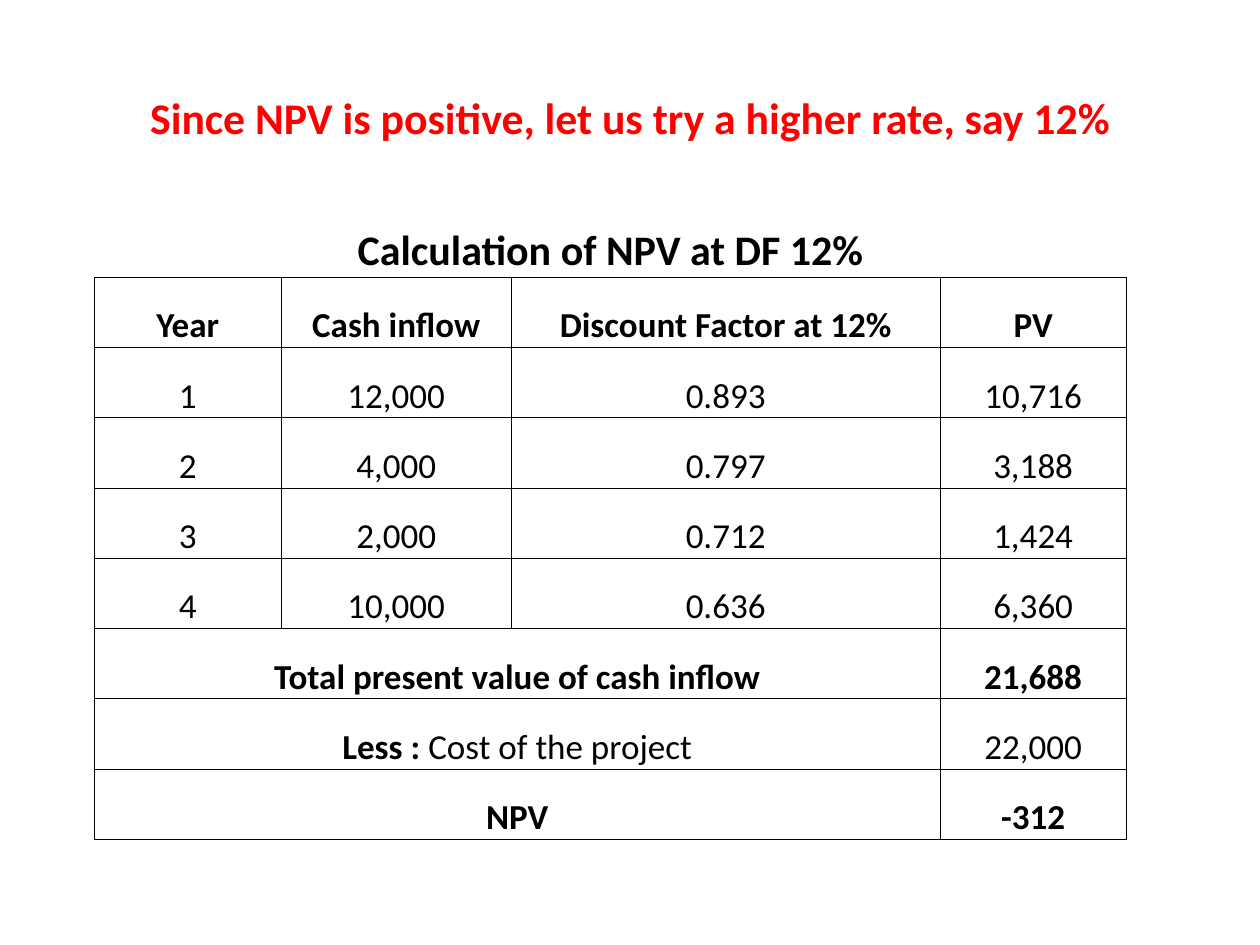
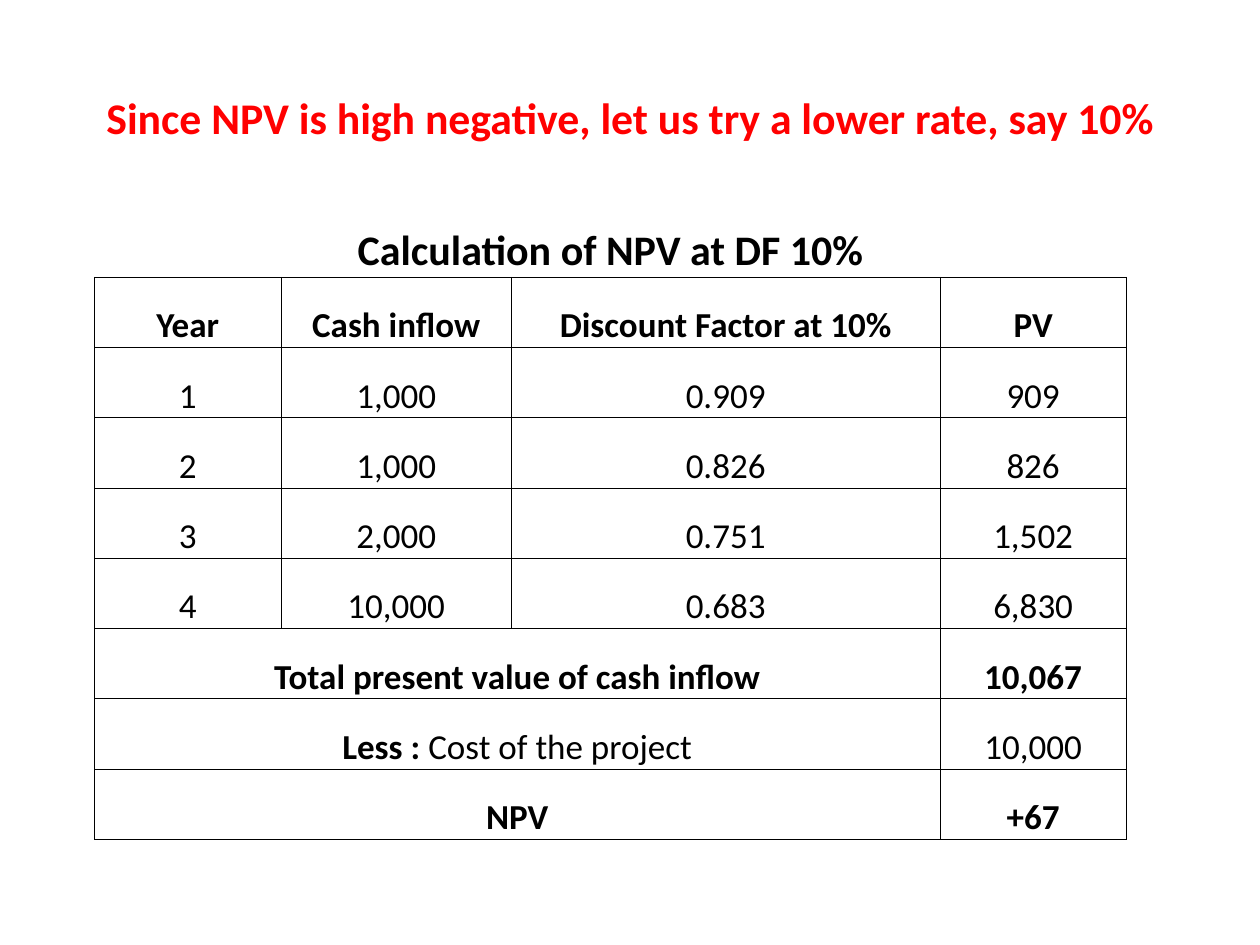
from dataclasses import dataclass

from lxml.etree import SubElement
from pptx import Presentation
from pptx.dml.color import RGBColor
from pptx.enum.text import MSO_ANCHOR, PP_ALIGN
from pptx.oxml.ns import qn
from pptx.util import Inches, Pt

FONT = "Calibri"
BLACK, RED = "000000", "FF0000"
SLIDE_WIDTH, SLIDE_HEIGHT = Inches(10), Inches(7.5)

TABLE_LEFT, TABLE_TOP = Inches(0.75), Inches(1.62)
TABLE_WIDTH, TABLE_HEIGHT = Inches(8.19), Inches(5.04)
COLUMN_WIDTHS = [Inches(width) for width in (1.48, 1.83, 3.4, 1.48)]
CAPTION_HEIGHT = Inches(0.58)
CELL_INSET = Inches(0.01)
BORDER_WIDTH = Pt(0.5)


@dataclass(frozen=True)
class TextRun:
    text: str
    bold: bool = False
    size: float = 20
    color: str = BLACK


@dataclass(frozen=True)
class TableRow:
    """Cells from left to right; a first cell with a span covers several columns."""
    cells: list[list[TextRun]]
    span: int = 1


@dataclass(frozen=True)
class Trial:
    """One attempt at finding the rate at which the project breaks even."""
    heading: str
    rate: str
    cost: int
    inflows: list[int]
    factors: list[float]

    def rows(self) -> list[TableRow]:
        values = [round(inflow * factor)
                  for inflow, factor in zip(self.inflows, self.factors)]
        total = sum(values)
        headers = ("Year", "Cash inflow", f"Discount Factor at {self.rate}", "PV")
        caption = TextRun(f"Calculation of NPV at DF {self.rate}", True, 24)
        years = [
            TableRow([[TextRun(text)] for text in
                      (str(year), f"{inflow:,}", f"{factor:.3f}", f"{value:,}")])
            for year, (inflow, factor, value)
            in enumerate(zip(self.inflows, self.factors, values), start=1)
        ]
        return [
            TableRow([[caption]], span=4),
            TableRow([[TextRun(header, True)] for header in headers]),
            *years,
            TableRow([[TextRun("Total present value of cash inflow", True)],
                      [TextRun(f"{total:,}", True)]], span=3),
            TableRow([[TextRun("Less : ", True), TextRun("Cost of the project")],
                      [TextRun(f"{self.cost:,}")]], span=3),
            TableRow([[TextRun("NPV", True)],
                      [TextRun(f"{total - self.cost:+,}", True)]], span=3),
        ]


TRIALS = [
    Trial("Since NPV is positive, let us try a higher rate, say 12%", "12%", 22000,
          [12000, 4000, 2000, 10000], [0.893, 0.797, 0.712, 0.636]),
    Trial("Since NPV is high negative, let us try a lower rate, say 10%", "10%", 10000,
          [1000, 1000, 2000, 10000], [0.909, 0.826, 0.751, 0.683]),
]


def rgb(color: str) -> RGBColor:
    return RGBColor.from_string(color)


def write_centred(frame, runs: list[TextRun]) -> None:
    paragraph = frame.paragraphs[0]
    paragraph.alignment = PP_ALIGN.CENTER
    for part in runs:
        run = paragraph.add_run()
        run.text = part.text
        run.font.name = FONT
        run.font.size = Pt(part.size)
        run.font.bold = part.bold
        run.font.color.rgb = rgb(part.color)


def set_borders(cell, visible_sides: str) -> None:
    """Draw the sides named by their letters (L, R, T, B) and clear the others."""
    properties = cell._tc.get_or_add_tcPr()
    for side in "LRTB":
        line = SubElement(properties, qn(f"a:ln{side}"), w=str(BORDER_WIDTH))
        if side in visible_sides:
            fill = SubElement(line, qn("a:solidFill"))
            SubElement(fill, qn("a:srgbClr"), val=BLACK)
        else:
            SubElement(line, qn("a:noFill"))


def format_cell(cell, visible_sides: str) -> None:
    set_borders(cell, visible_sides)
    cell.fill.background()
    cell.vertical_anchor = MSO_ANCHOR.BOTTOM
    cell.margin_left = cell.margin_right = cell.margin_top = CELL_INSET
    cell.margin_bottom = 0


def add_npv_table(slide, rows: list[TableRow]) -> None:
    table = slide.shapes.add_table(
        len(rows), len(COLUMN_WIDTHS),
        TABLE_LEFT, TABLE_TOP, TABLE_WIDTH, TABLE_HEIGHT).table
    table.first_row = table.horz_banding = False
    for column, width in zip(table.columns, COLUMN_WIDTHS):
        column.width = width
    body_height = (TABLE_HEIGHT - CAPTION_HEIGHT) // (len(rows) - 1)

    for index, row in enumerate(rows):
        is_caption = index == 0
        table.rows[index].height = CAPTION_HEIGHT if is_caption else body_height
        for column in range(len(COLUMN_WIDTHS)):
            format_cell(table.cell(index, column), "B" if is_caption else "LRTB")
        if row.span > 1:
            table.cell(index, 0).merge(table.cell(index, row.span - 1))
        for position, runs in enumerate(row.cells):
            column = position + row.span - 1 if position else 0
            write_centred(table.cell(index, column).text_frame, runs)


def add_trial_slide(presentation, trial: Trial) -> None:
    slide = presentation.slides.add_slide(presentation.slide_layouts[5])
    title = slide.shapes.title
    title.left, title.top = int(SLIDE_WIDTH * 0.05), int(SLIDE_HEIGHT * 0.04)
    title.width, title.height = int(SLIDE_WIDTH * 0.9), Inches(1.25)
    title.text_frame.vertical_anchor = MSO_ANCHOR.MIDDLE
    write_centred(title.text_frame, [TextRun(trial.heading, True, 25, RED)])
    add_npv_table(slide, trial.rows())


def main() -> None:
    presentation = Presentation()
    presentation.slide_width, presentation.slide_height = SLIDE_WIDTH, SLIDE_HEIGHT
    for trial in TRIALS:
        add_trial_slide(presentation, trial)
    presentation.save("out.pptx")


if __name__ == "__main__":
    main()
